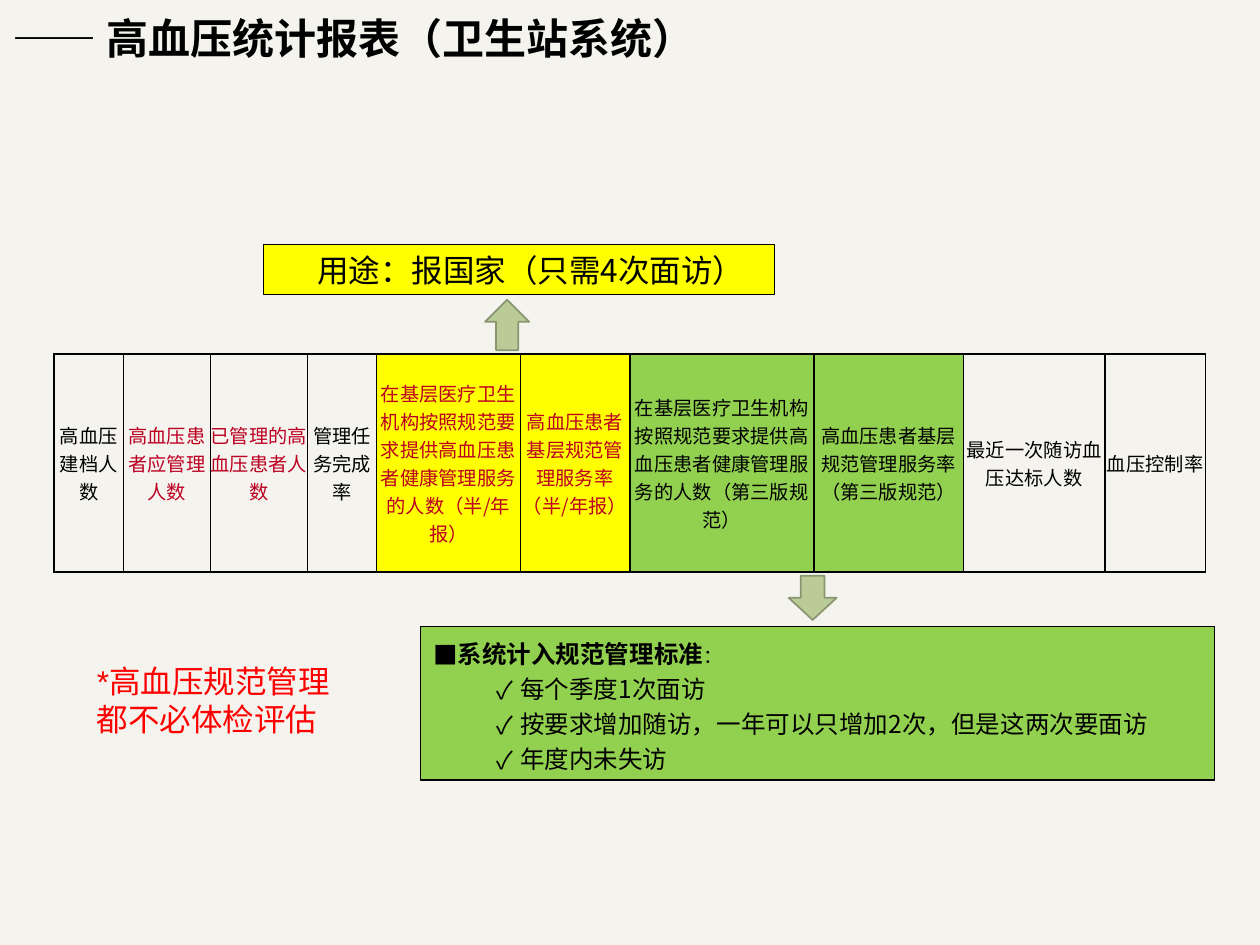
from lxml import etree
from pptx import Presentation
from pptx.dml.color import RGBColor
from pptx.enum.shapes import MSO_SHAPE
from pptx.enum.text import MSO_ANCHOR, MSO_AUTO_SIZE, PP_ALIGN
from pptx.oxml.ns import qn
from pptx.util import Inches, Pt

RECT, UP, DOWN = MSO_SHAPE.RECTANGLE, MSO_SHAPE.UP_ARROW, MSO_SHAPE.DOWN_ARROW
MIDDLE, NO_FIT = MSO_ANCHOR.MIDDLE, MSO_AUTO_SIZE.NONE
LEFT, CENTER = PP_ALIGN.LEFT, PP_ALIGN.CENTER
TITLE_ONLY = 5

THEME = {
    "background": "F4F3EE", "black": "000000", "crimson": "BC0021", "red": "FF0000",
    "yellow": "FFFF00", "green": "92D050", "sage": "BACB98", "sage_line": "8A9670",
    "title": 24, "callout": 18, "criteria": 14, "cell": 11,
    "font": "Noto Sans CJK SC", "note_font": "Arial",
}


def color(name):
    return RGBColor.from_string(THEME[name])


def write(paragraph, text, size, ink="black", font="font", bold=False, align=LEFT,
          margin=0, indent=0, spacing=None, bullet=None):
    paragraph.alignment = align
    if spacing:
        paragraph.line_spacing = Pt(spacing)
    properties = paragraph._p.get_or_add_pPr()
    properties.set("marL", str(Inches(margin)))
    properties.set("indent", str(Inches(indent)))
    if bullet:
        etree.SubElement(properties, qn("a:buFont"), typeface=THEME["font"])
        etree.SubElement(properties, qn("a:buChar"), char=bullet)
    run = paragraph.add_run()
    run.text = text
    run.font.size = Pt(THEME[size])
    run.font.bold = bold
    run.font.color.rgb = color(ink)
    run.font.name = THEME[font]
    etree.SubElement(run._r.get_or_add_rPr(), qn("a:ea"), typeface=THEME[font])


prs = Presentation()
prs.slide_width, prs.slide_height = Inches(10), Inches(7.5)
slide = prs.slides.add_slide(prs.slide_layouts[TITLE_ONLY])
slide.background.fill.solid()
slide.background.fill.fore_color.rgb = color("background")

title = slide.shapes.title
title.left, title.top, title.width, title.height = map(Inches, (0, 0.05, 6.49, 0.5))
title.text_frame.auto_size = NO_FIT
title.text_frame.vertical_anchor = MIDDLE
write(title.text_frame.paragraphs[0], "—— 高血压统计报表（卫生站系统）", "title", bold=True)

served = "在基层医疗卫生机构按照规范要求提供高血压患者健康管理服务的人数"
rate = "高血压患者基层规范管理服务率"
columns = [
    ("高血压建档人数", 0.55, "black", None),
    ("高血压患者应管理人数", 0.69, "crimson", None),
    ("已管理的高血压患者人数", 0.77, "crimson", None),
    ("管理任务完成率", 0.55, "black", None),
    (served + "（半/年报）", 1.14, "crimson", "yellow"),
    (rate + "（半/年报）", 0.87, "crimson", "yellow"),
    (served + "（第三版规范）", 1.46, "black", "green"),
    (rate + "（第三版规范）", 1.19, "black", "green"),
    ("最近一次随访血压达标人数", 1.12, "black", None),
    ("血压控制率", 0.8, "black", None),
]
report = slide.shapes.add_table(1, len(columns), Inches(0.43), Inches(2.81),
                                Inches(9.13), Inches(1.73)).table
report.first_row = report.horz_banding = False
for index, (heading, width, ink, fill) in enumerate(columns):
    report.columns[index].width = Inches(width)
    cell = report.cell(0, index)
    cell.margin_left = cell.margin_right = cell.margin_top = cell.margin_bottom = 0
    cell.vertical_anchor = MIDDLE
    write(cell.text_frame.paragraphs[0], heading, "cell", ink=ink, align=CENTER)
    borders = cell._tc.get_or_add_tcPr()
    for side in ("a:lnL", "a:lnR", "a:lnT", "a:lnB"):
        border = etree.SubElement(borders, qn(side), w=str(Pt(1)))
        paint = etree.SubElement(border, qn("a:solidFill"))
        etree.SubElement(paint, qn("a:srgbClr"), val=THEME["black"])
    if fill:
        cell.fill.solid()
        cell.fill.fore_color.rgb = color(fill)
    else:
        cell.fill.background()

blocks = []
for kind, box, fill, line, weight in [
    (UP, (3.85, 2.38, 0.35, 0.4), "sage", "sage_line", 1),
    (RECT, (2.09, 1.94, 4.06, 0.4), "yellow", "black", 0.75),
    (DOWN, (6.26, 4.57, 0.38, 0.35), "sage", "sage_line", 1),
    (RECT, (3.34, 4.97, 6.3, 1.22), "green", "black", 0.75),
]:
    block = slide.shapes.add_shape(kind, *map(Inches, box))
    block.shadow.inherit = False
    block.fill.solid()
    block.fill.fore_color.rgb = color(fill)
    block.line.color.rgb = color(line)
    block.line.width = Pt(weight)
    block.text_frame.word_wrap = True
    block.text_frame.vertical_anchor = MIDDLE
    blocks.append(block)

purpose, criteria = blocks[1].text_frame, blocks[3].text_frame
write(purpose.paragraphs[0], "用途：报国家（只需4次面访）", "callout", indent=0.33)

heading = criteria.paragraphs[0]
write(heading, "系统计入规范管理标准", "criteria", bold=True,
      margin=0.19, indent=-0.19, spacing=20, bullet="■")
write(heading, "：", "cell", margin=0.19, indent=-0.19)
for rule in ("每个季度1次面访",
             "按要求增加随访，一年可以只增加2次，但是这两次要面访",
             "年度内未失访"):
    item = criteria.add_paragraph()
    item.level = 1
    write(item, rule, "criteria", margin=0.69, indent=-0.19, spacing=20, bullet="✓")

note = slide.shapes.add_textbox(Inches(0.67), Inches(5.2), Inches(2.2), Inches(0.71)).text_frame
note.word_wrap = True
note.vertical_anchor = MIDDLE
write(note.paragraphs[0], "*高血压规范管理都不必体检评估", "callout", ink="red", font="note_font")

prs.save("out.pptx")
